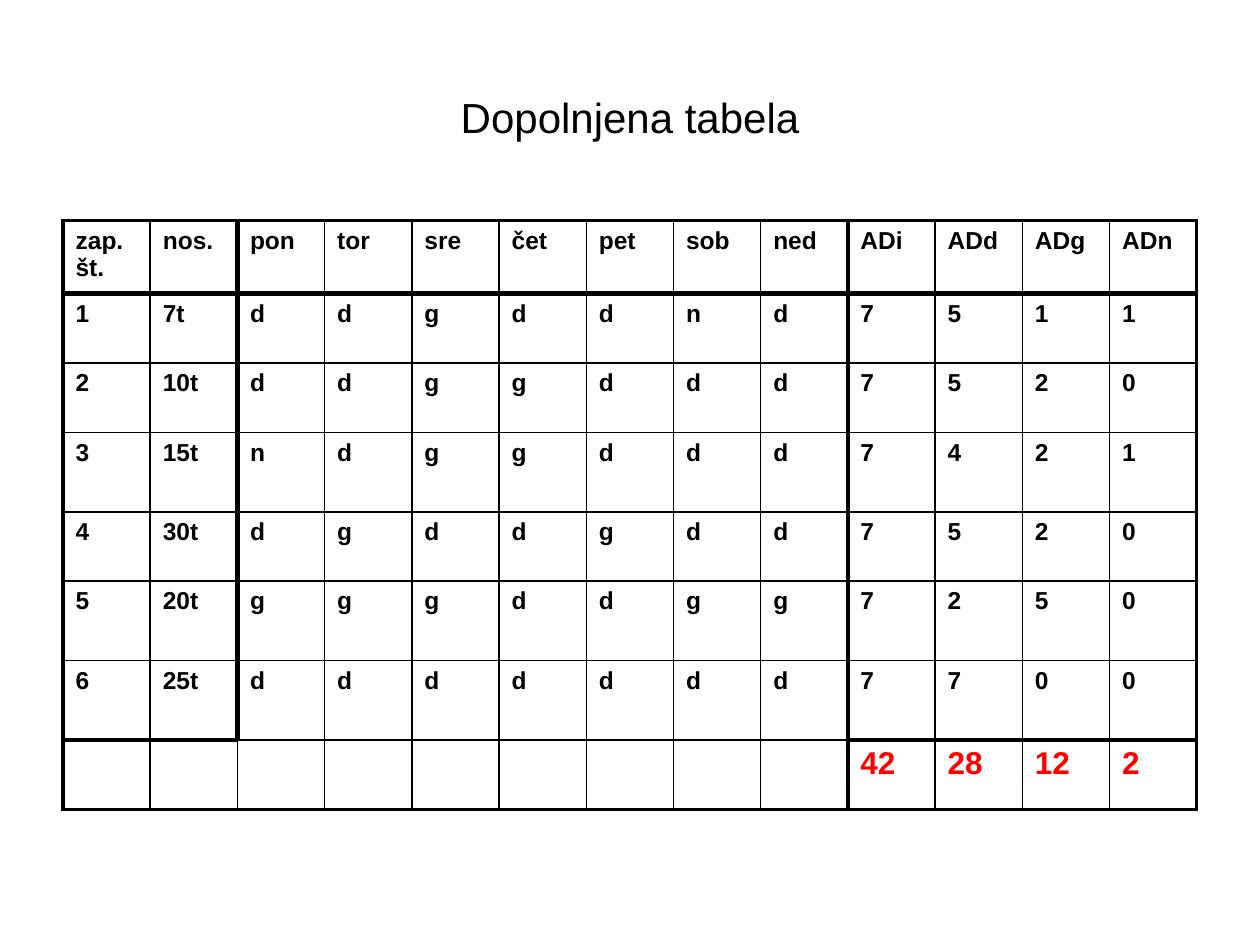
from lxml import etree
from pptx import Presentation
from pptx.dml.color import RGBColor
from pptx.enum.text import MSO_ANCHOR, PP_ALIGN
from pptx.oxml.ns import qn
from pptx.util import Cm, Pt

CENTER = PP_ALIGN.CENTER
MIDDLE = MSO_ANCHOR.MIDDLE
TITLE_ONLY = 5
FONT = "Arial"
COLORS = {"text": "000000", "line": "000000", "total": "FF0000"}
THIN, OUTER, THICK = 1, 2.25, 3

LEFT, WIDTH = 1.27, 22.86
ROW_HEIGHTS = [1.47, 1.4, 1.4, 1.6, 1.4, 1.6, 1.6, 1.4]
ROWS = [
    ["zap. št.", "nos.", "pon", "tor", "sre", "čet", "pet", "sob", "ned",
     "ADi", "ADd", "ADg", "ADn"],
    ["1", "7t", *"ddgddnd", *"7511"],
    ["2", "10t", *"ddggddd", *"7520"],
    ["3", "15t", *"ndggddd", *"7421"],
    ["4", "30t", *"dgddgdd", *"7520"],
    ["5", "20t", *"gggddgg", *"7250"],
    ["6", "25t", *"ddddddd", *"7700"],
    [""] * 9 + ["42", "28", "12", "2"],
]
TOTAL_ROW = len(ROWS) - 1
COLUMN_COUNT = len(ROWS[0])
FIRST_DAY, FIRST_SUM = 2, 9


def format_text(paragraph, size, color, bold=False):
    for span in paragraph.runs:
        span.font.name = FONT
        span.font.size = Pt(size)
        span.font.bold = bold
        span.font.color.rgb = RGBColor.from_string(COLORS[color])


def add_title(page, text):
    title = page.shapes.title
    title.left, title.top = Cm(LEFT), Cm(0.76)
    title.width, title.height = Cm(WIDTH), Cm(3.18)
    frame = title.text_frame
    frame.text = text
    frame.vertical_anchor = MIDDLE
    frame.paragraphs[0].alignment = CENTER
    format_text(frame.paragraphs[0], 24, "text")


def vertical_width(row, edge):
    if edge in (0, COLUMN_COUNT):
        return OUTER
    if edge == FIRST_SUM or (edge == FIRST_DAY and row < TOTAL_ROW):
        return THICK
    return THIN


def horizontal_width(edge, column):
    if edge in (0, len(ROWS)):
        return OUTER
    is_day = FIRST_DAY <= column < FIRST_SUM
    if edge == 1 or (edge == TOTAL_ROW and not is_day):
        return THICK
    return THIN


def set_borders(cell, row, column):
    widths = {
        "a:lnL": vertical_width(row, column),
        "a:lnR": vertical_width(row, column + 1),
        "a:lnT": horizontal_width(row, column),
        "a:lnB": horizontal_width(row + 1, column),
    }
    properties = cell._tc.get_or_add_tcPr()
    for tag, width in widths.items():
        line = etree.SubElement(properties, qn(tag), w=str(Pt(width)))
        fill = etree.SubElement(line, qn("a:solidFill"))
        etree.SubElement(fill, qn("a:srgbClr"), val=COLORS["line"])


def fill_cell(cell, text, row, column):
    set_borders(cell, row, column)
    cell.fill.background()
    cell.text_frame.text = text
    size, color = (18, "total") if row == TOTAL_ROW else (14, "text")
    format_text(cell.text_frame.paragraphs[0], size, color, bold=True)


def add_schedule(page):
    frame = page.shapes.add_table(len(ROWS), COLUMN_COUNT, Cm(LEFT), Cm(4.45),
                                  Cm(WIDTH), Cm(sum(ROW_HEIGHTS)))
    table = frame.table
    table.first_row = False
    table.horz_banding = False
    for column in table.columns:
        column.width = Cm(WIDTH / COLUMN_COUNT)
    for row, values in enumerate(ROWS):
        table.rows[row].height = Cm(ROW_HEIGHTS[row])
        for column, text in enumerate(values):
            fill_cell(table.cell(row, column), text, row, column)


def main():
    deck = Presentation()
    deck.slide_width, deck.slide_height = Cm(25.4), Cm(19.05)
    page = deck.slides.add_slide(deck.slide_layouts[TITLE_ONLY])
    add_title(page, "Dopolnjena tabela")
    add_schedule(page)
    deck.save("out.pptx")


if __name__ == "__main__":
    main()
